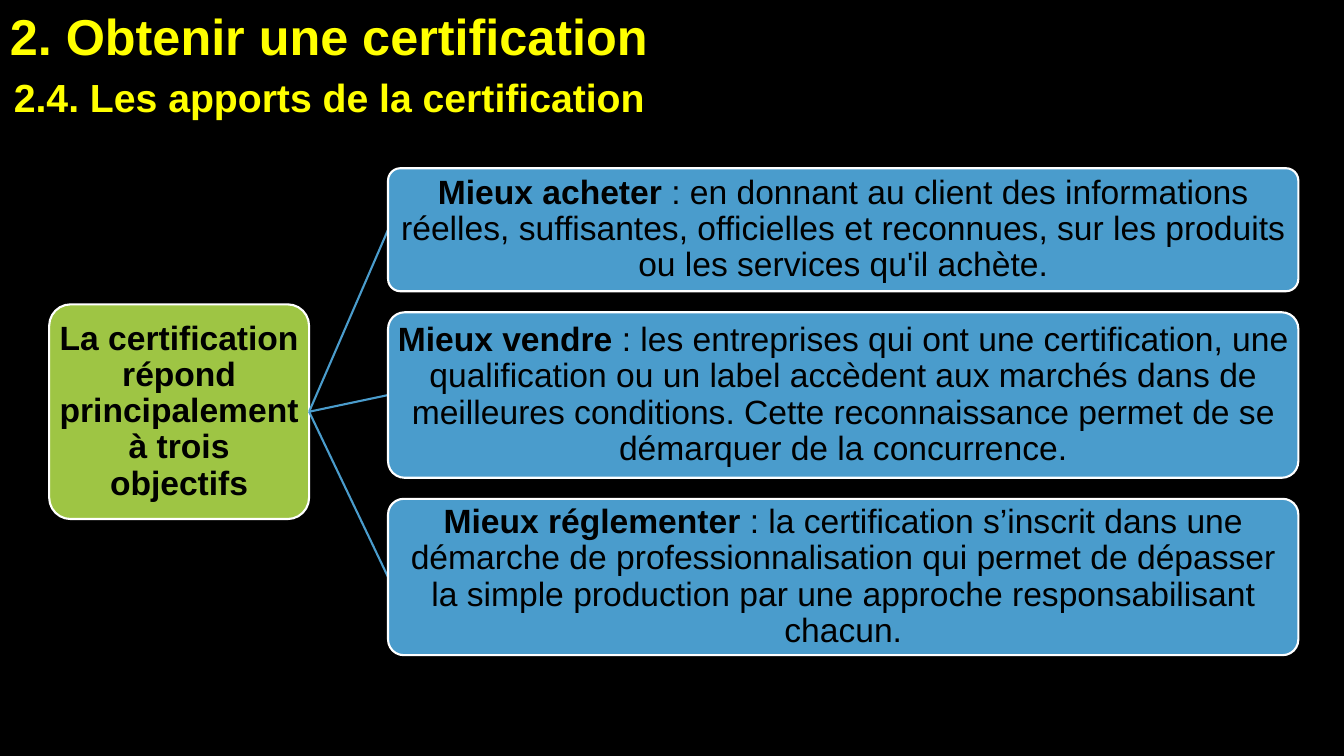
from dataclasses import dataclass

from lxml import etree
from pptx import Presentation
from pptx.dml.color import RGBColor
from pptx.enum.shapes import MSO_CONNECTOR, MSO_SHAPE
from pptx.enum.text import MSO_ANCHOR, PP_ALIGN
from pptx.oxml.ns import qn
from pptx.util import Cm, Pt

ROUND = MSO_SHAPE.ROUNDED_RECTANGLE
STRAIGHT = MSO_CONNECTOR.STRAIGHT
MIDDLE = MSO_ANCHOR.MIDDLE
LEFT = PP_ALIGN.LEFT
CENTER = PP_ALIGN.CENTER
JUSTIFY = PP_ALIGN.JUSTIFY


@dataclass(frozen=True)
class Theme:
    back: RGBColor = RGBColor(0, 0, 0)
    head: RGBColor = RGBColor(255, 255, 0)
    ink: RGBColor = RGBColor(0, 0, 0)
    edge: RGBColor = RGBColor(255, 255, 255)
    root: RGBColor = RGBColor(0x9E, 0xC5, 0x44)
    goal: RGBColor = RGBColor(0x4A, 0x9C, 0xCC)
    font: str = "Arial"
    title: int = 36
    sub: int = 28
    body: int = 24
    stroke: float = 1.5


THEME = Theme()

ROOT = "La certification répond principalement à trois objectifs"
GOALS = [
    (3.1, "Mieux acheter",
     " : en donnant au client des informations réelles, suffisantes, officielles "
     "et reconnues, sur les produits ou les services qu'il achète."),
    (4.17, "Mieux vendre",
     " : les entreprises qui ont une certification, une qualification ou un label "
     "accèdent aux marchés dans de meilleures conditions. Cette reconnaissance "
     "permet de se démarquer de la concurrence."),
    (3.94, "Mieux réglementer",
     " : la certification s’inscrit dans une démarche de professionnalisation qui "
     "permet de dépasser la simple production par une approche responsabilisant "
     "chacun."),
]


def add_run(para, text, size, color, bold):
    run = para.add_run()
    run.text = text
    font = run.font
    font.name = THEME.font
    font.size = Pt(size)
    font.bold = bold
    font.color.rgb = color


def add_head(slide, box, text, size, align, before):
    frame = slide.shapes.add_textbox(*map(Cm, box)).text_frame
    frame.word_wrap = True
    para = frame.paragraphs[0]
    para.alignment = align
    para.space_before = Pt(before)
    add_run(para, text, size, THEME.head, True)


def add_node(slide, box, fill, bold, plain=""):
    node = slide.shapes.add_shape(ROUND, *map(Cm, box))
    node.adjustments[0] = 0.1
    node.shadow.inherit = False
    node.fill.solid()
    node.fill.fore_color.rgb = fill
    node.line.color.rgb = THEME.edge
    node.line.width = Pt(THEME.stroke)
    frame = node.text_frame
    frame.word_wrap = True
    frame.vertical_anchor = MIDDLE
    frame.margin_left = frame.margin_right = Cm(0.05)
    frame.margin_top = frame.margin_bottom = Cm(0.05)
    para = frame.paragraphs[0]
    para.alignment = CENTER
    para.line_spacing = 0.9
    add_run(para, bold, THEME.body, THEME.ink, True)
    if plain:
        add_run(para, plain, THEME.body, THEME.ink, False)


def add_link(slide, start, end):
    link = slide.shapes.add_connector(STRAIGHT, *map(Cm, start + end))
    link.line.color.rgb = THEME.goal
    link.line.width = Pt(THEME.stroke)
    etree.SubElement(link._element.spPr, qn("a:effectLst"))


def add_tree(slide, box):
    left, top, width, height = box
    root_w, root_h, goal_w, gap = 6.55, 5.41, 22.94, 0.53
    mid = top + height / 2
    goal_x = left + width - goal_w
    add_node(slide, (left, mid - root_h / 2, root_w, root_h), THEME.root, ROOT)
    for goal_h, bold, plain in GOALS:
        add_link(slide, (left + root_w, mid), (goal_x, top + goal_h / 2))
        add_node(slide, (goal_x, top, goal_w, goal_h), THEME.goal, bold, plain)
        top += goal_h + gap


def main():
    deck = Presentation()
    deck.slide_width = Cm(33.87)
    deck.slide_height = Cm(19.05)
    slide = deck.slides.add_slide(deck.slide_layouts[6])
    slide.background.fill.solid()
    slide.background.fill.fore_color.rgb = THEME.back
    add_head(slide, (0, 0, 20, 1.8), "2. Obtenir une certification",
             THEME.title, LEFT, 3)
    add_head(slide, (0.1, 1.73, 16.8, 1.45), "2.4. Les apports de la certification",
             THEME.sub, JUSTIFY, 12)
    add_tree(slide, (1.24, 4.24, 31.48, 12.27))
    deck.save("out.pptx")


if __name__ == "__main__":
    main()
